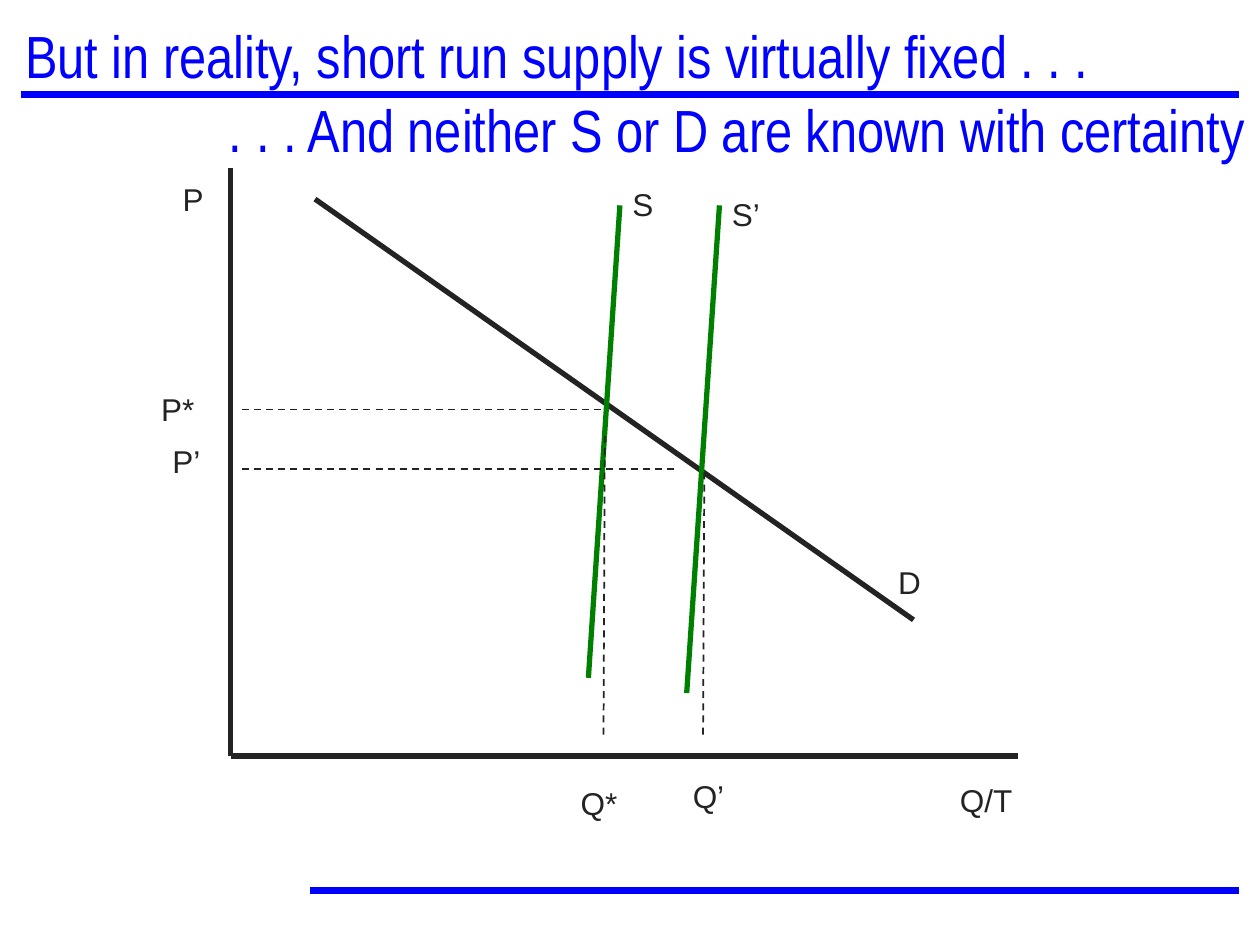
from collections import namedtuple
from dataclasses import dataclass

from pptx import Presentation
from pptx.dml.color import RGBColor
from pptx.enum.dml import MSO_LINE
from pptx.enum.shapes import MSO_CONNECTOR
from pptx.enum.text import MSO_ANCHOR, MSO_AUTO_SIZE, PP_ALIGN
from pptx.oxml.xmlchemy import OxmlElement
from pptx.util import Inches, Pt

Box = namedtuple("Box", "left top width height")


@dataclass(frozen=True)
class Theme:
    """Colours, fonts and type sizes of the slide."""
    blue: RGBColor = RGBColor(0x00, 0x00, 0xFF)
    ink: RGBColor = RGBColor(0x23, 0x23, 0x23)
    green: RGBColor = RGBColor(0x00, 0x80, 0x00)
    heading_font: str = "Arial Narrow"
    label_font: str = "Arial"
    heading_size: Pt = Pt(34)
    label_size: Pt = Pt(18)


THEME = Theme()
HEADING = {"name": THEME.heading_font, "size": THEME.heading_size, "bold": False}
LABEL = {"name": THEME.label_font, "size": THEME.label_size}
HEADING_FRAME = {
    "word_wrap": True,
    "auto_size": MSO_AUTO_SIZE.NONE,
    "vertical_anchor": MSO_ANCHOR.MIDDLE,
    "margin_left": Inches(0.12),
    "margin_right": Inches(0.12),
    "margin_top": Inches(0.06),
    "margin_bottom": Inches(0.06),
}
LABEL_FRAME = {"word_wrap": True, "vertical_anchor": MSO_ANCHOR.TOP}

AXES = [((0, 0), (0, 4.67)), ((6.25, 4.67), (0, 4.67))]
DEMAND = [((5.42, 3.59), (0.67, 0.25))]
SUPPLY = [((3.09, 0.3), (2.84, 4.05)), ((3.88, 0.3), (3.62, 4.17))]
GUIDES = [
    ((0.09, 1.92), (2.96, 1.92)),
    ((2.96, 4.5), (2.97, 2.09)),
    ((0.09, 2.39), (3.54, 2.39)),
    ((3.75, 4.5), (3.76, 2.42)),
]
LABELS = [
    ("P", Box(-0.48, 0.05, 0.42, 0.42)),
    ("P*", Box(-0.65, 1.72, 0.58, 0.4)),
    ("P’", Box(-0.56, 2.13, 0.58, 0.4)),
    ("Q*", Box(2.68, 4.84, 0.57, 0.4)),
    ("Q’", Box(3.57, 4.79, 0.57, 0.4)),
    ("Q/T", Box(5.69, 4.82, 0.82, 0.4)),
    ("S", Box(3.09, 0.09, 0.42, 0.42)),
    ("S’", Box(3.88, 0.17, 0.55, 0.4)),
    ("D", Box(5.2, 3.09, 0.46, 0.4)),
]


def set_values(target, values):
    """Set each attribute named in a dict of format values."""
    for name, value in values.items():
        setattr(target, name, value)


def write_text(shape, text, frame_format, font_format, color, alignment=PP_ALIGN.LEFT):
    """Fill a shape with one formatted paragraph."""
    set_values(shape.text_frame, frame_format)
    paragraph = shape.text_frame.paragraphs[0]
    paragraph.alignment = alignment
    run = paragraph.add_run()
    run.text = text
    set_values(run.font, font_format)
    run.font.color.rgb = color


def add_line(slide, start, end, color, width, dash=None):
    """Draw a straight line between two points in inches."""
    line = slide.shapes.add_connector(
        MSO_CONNECTOR.STRAIGHT, *(Inches(value) for value in (*start, *end)))
    line.line.color.rgb = color
    set_values(line.line, {"width": Pt(width), "dash_style": dash})
    line._element.spPr.append(OxmlElement("a:effectLst"))


def add_rules(slide, box):
    """Draw the long top rule and the shorter bottom rule of the box."""
    right, bottom = box.left + box.width, box.top + box.height
    add_line(slide, (box.left, box.top), (right, box.top), THEME.blue, 4)
    add_line(slide, (box.left + 2.29, bottom), (right, bottom), THEME.blue, 4)


def add_headings(slide, box):
    """Place the title and the right-aligned line that continues it."""
    title = slide.shapes.title
    set_values(title, {
        "left": Inches(box.left), "top": Inches(box.top),
        "width": Inches(box.width), "height": Inches(0.53),
    })
    write_text(title, "But in reality, short run supply is virtually fixed . . .",
               HEADING_FRAME, HEADING, THEME.blue)
    second_line = slide.shapes.add_textbox(
        Inches(box.left + 0.09), Inches(box.top + 0.51), Inches(box.width), Inches(0.69))
    write_text(second_line, ". . . And neither S or D are known with certainty",
               HEADING_FRAME, HEADING, THEME.blue, PP_ALIGN.RIGHT)


def add_market_diagram(slide, box):
    """Draw axes, curves, guides and labels from the top of the price axis."""
    def shift(point):
        """Move a point from the diagram to the slide."""
        return box.left + point[0], box.top + point[1]

    for segments, color, width, dash in (
        (AXES, THEME.ink, 3, None),
        (DEMAND, THEME.ink, 3, None),
        (SUPPLY, THEME.green, 3, None),
        (GUIDES, THEME.ink, 1, MSO_LINE.DASH),
    ):
        for start, end in segments:
            add_line(slide, shift(start), shift(end), color, width, dash)
    for text, place in LABELS:
        left, top = shift(place)
        label = slide.shapes.add_textbox(
            Inches(left), Inches(top), Inches(place.width), Inches(place.height))
        write_text(label, text, LABEL_FRAME, LABEL, THEME.ink)


def main():
    """Build and save the presentation."""
    presentation = Presentation()
    set_values(presentation, {"slide_width": Inches(10), "slide_height": Inches(7.5)})
    slide = presentation.slides.add_slide(presentation.slide_layouts[5])
    add_rules(slide, Box(0.17, 0.75, 9.66, 6.32))
    add_headings(slide, Box(0.08, 0.17, 9.83, 1.2))
    add_market_diagram(slide, Box(1.83, 1.33, 6.25, 4.67))
    presentation.save("out.pptx")


if __name__ == "__main__":
    main()
